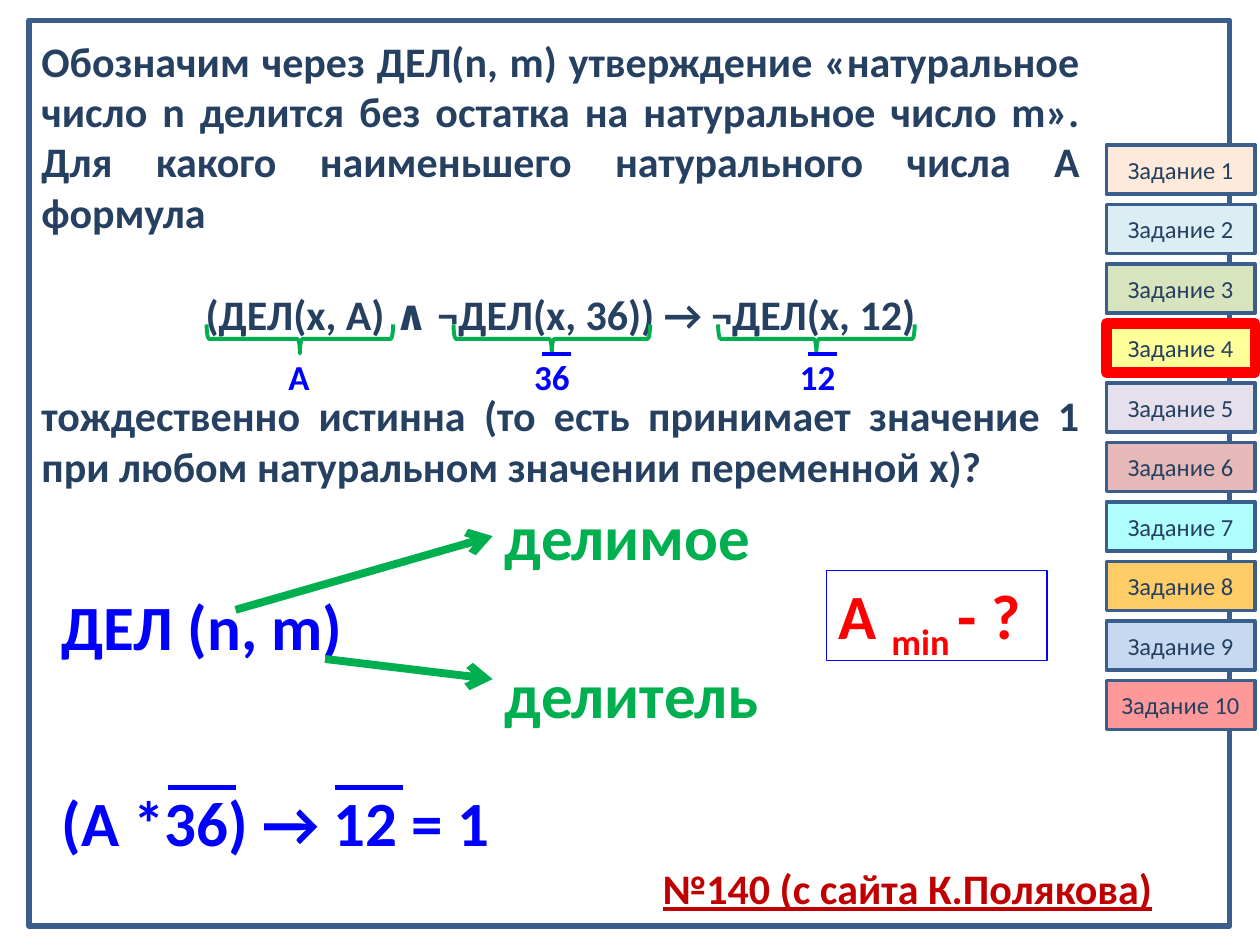
from lxml.etree import SubElement
from pptx import Presentation
from pptx.dml.color import RGBColor
from pptx.enum.shapes import MSO_CONNECTOR, MSO_SHAPE
from pptx.enum.text import MSO_ANCHOR, PP_ALIGN
from pptx.oxml.ns import qn
from pptx.util import Inches, Pt

HUES = {"navy": "254061", "edge": "3A5F8C", "blue": "0000FF",
        "green": "00B050", "red": "FF0000", "wine": "C00000"}
TABS = ["FDEADA", "DBEEF4", "D7E4BD", "FFFF99", "E6E0EC",
        "E6B9B8", "AFFFFF", "FFCC66", "C6D9F1", "FF9999"]
ACTIVE = 4
TASK = [
    ("Обозначим через ДЕЛ(n, m) утверждение «натуральное число n делится "
     "без остатка на натуральное число m». Для какого наименьшего "
     "натурального числа А формула", PP_ALIGN.JUSTIFY),
    ("(ДЕЛ(x, A) ∧ ¬ДЕЛ(x, 36)) → ¬ДЕЛ(x, 12)", PP_ALIGN.CENTER),
    ("тождественно истинна (то есть принимает значение 1 при любом "
     "натуральном значении переменной х)?", PP_ALIGN.JUSTIFY),
]
GAP = 29.3  # one line of task text, in points
GOAL = [("А ", 0), ("min ", -25000), ("- ?", 0)]

# text, place, wrap, format
BIG = {"size": Pt(36), "bold": True}
SMALL = {"size": Pt(20), "bold": True}
NOTES = [
    ("№140 (с сайта К.Полякова)", (5.16, 6.8, 4.45, 0.5), True, "wine",
     {"size": Pt(24), "bold": True, "underline": True}),
    ("ДЕЛ (n, m)", (0.39, 4.61, 2.45, 0.71), False, "blue", BIG),
    ("делимое", (3.91, 3.9, 2.17, 0.71), False, "green", BIG),
    ("делитель", (3.91, 5.15, 2.24, 0.71), False, "green", BIG),
    ("(А *36) → 12 = 1", (0.39, 6.17, 4.61, 0.71), True, "blue", BIG),
    ("А", (2.19, 2.77, 0.78, 0.44), True, "blue", SMALL),
    ("36", (4.14, 2.77, 0.78, 0.44), True, "blue", SMALL),
    ("12", (6.25, 2.77, 0.78, 0.44), True, "blue", SMALL),
]
BRACES = [(2.38, 1.48), (4.38, 1.56), (6.48, 1.56)]  # middle, span
BRACE_Y, DEPTH = 2.69, 0.23
BARS = [(4.3, 2.81, 0.23, 2.25), (6.41, 2.81, 0.23, 2.25),
        (1.33, 6.25, 0.54, 3), (2.66, 6.25, 0.54, 3)]  # left, y, width, weight

deck = Presentation()
deck.slide_width, deck.slide_height = Inches(10), Inches(7.5)
slide = deck.slides.add_slide(deck.slide_layouts[6])
shapes = slide.shapes


def rgb(name):
    return RGBColor.from_string(HUES.get(name, name))


def place(box):
    return [Inches(v) for v in box]


def outline(item, hue, weight):
    item.line.color.rgb = rgb(hue)
    item.line.width = Pt(weight)


def form(kind, box, hue, weight, fill=None):
    item = shapes.add_shape(kind, *place(box))
    item.shadow.inherit = False
    if fill:
        item.fill.solid()
        item.fill.fore_color.rgb = rgb(fill)
    else:
        item.fill.background()
    outline(item, hue, weight)
    return item


def write(para, text, hue, style):
    run = para.add_run()
    run.text = text
    for key, value in {"name": "Calibri", **style}.items():
        setattr(run.font, key, value)
    run.font.color.rgb = rgb(hue)
    return run


def label(box, wrap=True):
    item = shapes.add_textbox(*place(box))
    item.text_frame.word_wrap = wrap
    return item


def rule(start, end, hue, weight, arrow=False):
    item = shapes.add_connector(MSO_CONNECTOR.STRAIGHT, *place(start + end))
    outline(item, hue, weight)
    if arrow:
        SubElement(item.line._get_or_add_ln(), qn("a:tailEnd"), type="arrow")
    SubElement(item._element.spPr, qn("a:effectLst"))
    return item


form(MSO_SHAPE.RECTANGLE, (0.23, 0.16, 9.53, 7.19), "edge", 3)

for i, fill in enumerate(TABS):
    on = i + 1 == ACTIVE
    tab = form(MSO_SHAPE.FLOWCHART_PROCESS, (8.78, 1.15 + i * 4.25 / 9, 1.18, 0.39),
               "red" if on else "edge", 6 if on else 2, fill)
    tab.text_frame.vertical_anchor = MSO_ANCHOR.MIDDLE
    para = tab.text_frame.paragraphs[0]
    para.alignment = PP_ALIGN.CENTER
    write(para, f"Задание {i + 1}", "navy", {"size": Pt(14)})

frame = label((0.23, 0.23, 8.44, 4.14)).text_frame
for i, (text, align) in enumerate(TASK):
    para = frame.add_paragraph() if i else frame.paragraphs[0]
    para.alignment = align
    para.space_before = Pt(GAP if i else 0)
    write(para, text, "navy", {"size": Pt(24), "bold": True})

notes = {}
for text, box, wrap, hue, style in NOTES:
    notes[text] = label(box, wrap)
    write(notes[text].text_frame.paragraphs[0], text, hue, style)

arrow = rule((1.87, 4.84), (3.91, 4.26), "green", 4.5, True)
arrow.end_connect(notes["делимое"], 1)
rule((2.58, 5.23), (3.91, 5.39), "green", 4.5, True)

for mid, span in BRACES:
    brace = form(MSO_SHAPE.LEFT_BRACE,
                 (mid - DEPTH / 2, BRACE_Y - span / 2, DEPTH, span), "green", 2.25)
    brace.rotation = 270

goal = form(MSO_SHAPE.RECTANGLE, (6.56, 4.53, 1.75, 0.71), "blue", 0.75)
goal.text_frame.vertical_anchor = MSO_ANCHOR.TOP
para = goal.text_frame.paragraphs[0]
para.alignment = PP_ALIGN.LEFT
for text, shift in GOAL:
    run = write(para, text, "red", BIG)
    if shift:
        run._r.get_or_add_rPr().set("baseline", str(shift))

for left, y, width, weight in BARS:
    rule((left, y), (left + width, y), "blue", weight)

deck.save("out.pptx")
